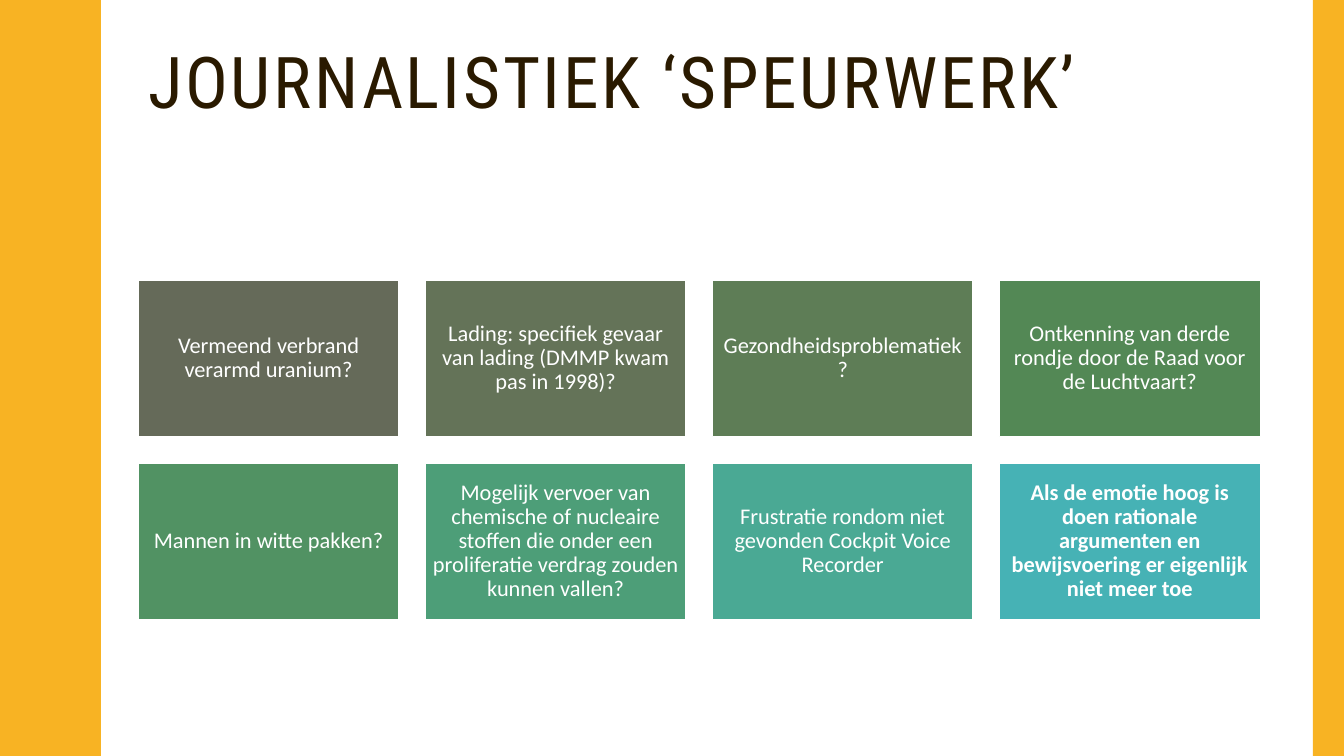
from pptx import Presentation
from pptx import util as u
from pptx.dml import color
from pptx.enum import shapes, text

SLIDE_W, SLIDE_H = u.Inches(13.33), u.Inches(7.5)
YELLOW, DARK, WHITE = "F8B323", "2A1A00", "FFFFFF"
CONTENT_LEFT, CONTENT_W = u.Inches(1.37), u.Inches(11.13)
COLUMNS, GAP, TILE_RATIO = 4, 0.1, 0.6
WAVES = 5
HALF_WAVE = [
    (0.78, 0), (0.78, 0.07), (0.79, 0.14), (0.8, 0.2), (0.81, 0.25),
    (0.83, 0.29), (0.85, 0.33), (0.87, 0.38), (0.89, 0.42), (0.91, 0.46),
    (0.93, 0.5), (0.95, 0.55), (0.96, 0.61), (0.97, 0.68), (0.97, 0.75),
]
QUESTIONS = [
    ("Vermeend verbrand verarmd uranium?", "656A59", False),
    ("Lading: specifiek gevaar van lading (DMMP kwam pas in 1998)?", "647358", False),
    ("Gezondheidsproblematiek?", "5E7D56", False),
    ("Ontkenning van derde rondje door de Raad voor de Luchtvaart?", "538855", False),
    ("Mannen in witte pakken?", "519263", False),
    ("Mogelijk vervoer van chemische of nucleaire stoffen die onder een "
     "proliferatie verdrag zouden kunnen vallen?", "4D9E78", False),
    ("Frustratie rondom niet gevonden Cockpit Voice Recorder", "4AA994", False),
    ("Als de emotie hoog is doen rationale argumenten en bewijsvoering "
     "er eigenlijk niet meer toe", "46B2B5", True),
]


def paint(fill, hex_color):
    """Give a fill one solid colour."""
    fill.solid()
    fill.fore_color.rgb = color.RGBColor.from_string(hex_color)


def set_format(target, values):
    """Set every attribute in a dict of format values."""
    for attribute, value in values.items():
        setattr(target, attribute, value)


def write(frame, wording, hex_color, frame_format, paragraph_format, font_format):
    """Fill a text frame with one formatted paragraph and return its run."""
    set_format(frame, {"word_wrap": True, **frame_format})
    paragraph = frame.paragraphs[0]
    set_format(paragraph, {"line_spacing": 0.9, **paragraph_format})
    run = paragraph.add_run()
    run.text = wording
    set_format(run.font, font_format)
    paint(run.font.fill, hex_color)
    return run


def add_wavy_edge(slide, left, top, height):
    """Draw the left band, whose right side repeats one wave down the slide."""
    scale = height / (WAVES * 1.5)
    wave = HALF_WAVE + [(x, 1.5 - y) for x, y in HALF_WAVE[-2:0:-1]]
    outline = [(x, y + 1.5 * n) for n in range(WAVES) for x, y in wave]
    outline += [(HALF_WAVE[0][0], WAVES * 1.5), (0, WAVES * 1.5)]
    builder = slide.shapes.build_freeform(0, 0, scale=scale)
    builder.add_line_segments(outline, close=True)
    band = builder.convert_to_shape(left, top)
    band.shadow.inherit = False
    paint(band.fill, YELLOW)
    band.line.fill.background()


def add_block(slide, left, top, width, height, hex_color):
    """Draw a plain rectangle without an outline."""
    block = slide.shapes.add_shape(
        shapes.MSO_SHAPE.RECTANGLE, *map(round, (left, top, width, height)))
    block.shadow.inherit = False
    paint(block.fill, hex_color)
    block.line.fill.background()
    return block


def add_title(slide, left, top, width, height):
    """Write the heading at the top of its box."""
    heading = slide.shapes.add_textbox(left, top, width, height)
    run = write(
        heading.text_frame, "JOURNALISTIEK ‘SPEURWERK’", DARK,
        {"vertical_anchor": text.MSO_ANCHOR.TOP}, {},
        {"name": "Roboto Condensed", "size": u.Pt(51)})
    run.font._element.set("spc", "200")


def add_question_grid(slide, left, top, width):
    """Lay out the questions in rows of coloured tiles."""
    tile_w = width / (COLUMNS + GAP * (COLUMNS - 1))
    tile_h = tile_w * TILE_RATIO
    step = tile_w * GAP
    margins = {f"margin_{side}": u.Inches(0.07)
               for side in ("left", "top", "right", "bottom")}
    for index, (question, hex_color, bold) in enumerate(QUESTIONS):
        row, column = divmod(index, COLUMNS)
        tile = add_block(slide, left + column * (tile_w + step),
                         top + row * (tile_h + step), tile_w, tile_h, hex_color)
        paint(tile.line.fill, WHITE)
        tile.line.width = u.Pt(1)
        write(tile.text_frame, question, WHITE,
              {"vertical_anchor": text.MSO_ANCHOR.MIDDLE, **margins},
              {"alignment": text.PP_ALIGN.CENTER},
              {"name": "Calibri", "size": u.Pt(16), "bold": bold})


def main():
    """Build and save the slide."""
    deck = Presentation()
    set_format(deck, {"slide_width": SLIDE_W, "slide_height": SLIDE_H})
    slide = deck.slides.add_slide(deck.slide_layouts[6])
    paint(slide.background.fill, WHITE)
    edge_w = u.Inches(0.31)
    add_title(slide, CONTENT_LEFT, u.Inches(0.42), CONTENT_W, u.Inches(1.63))
    add_wavy_edge(slide, 0, 0, SLIDE_H)
    add_block(slide, SLIDE_W - edge_w, 0, edge_w, SLIDE_H, YELLOW)
    add_question_grid(slide, CONTENT_LEFT, u.Inches(2.78), CONTENT_W)
    deck.save("out.pptx")


if __name__ == "__main__":
    main()
